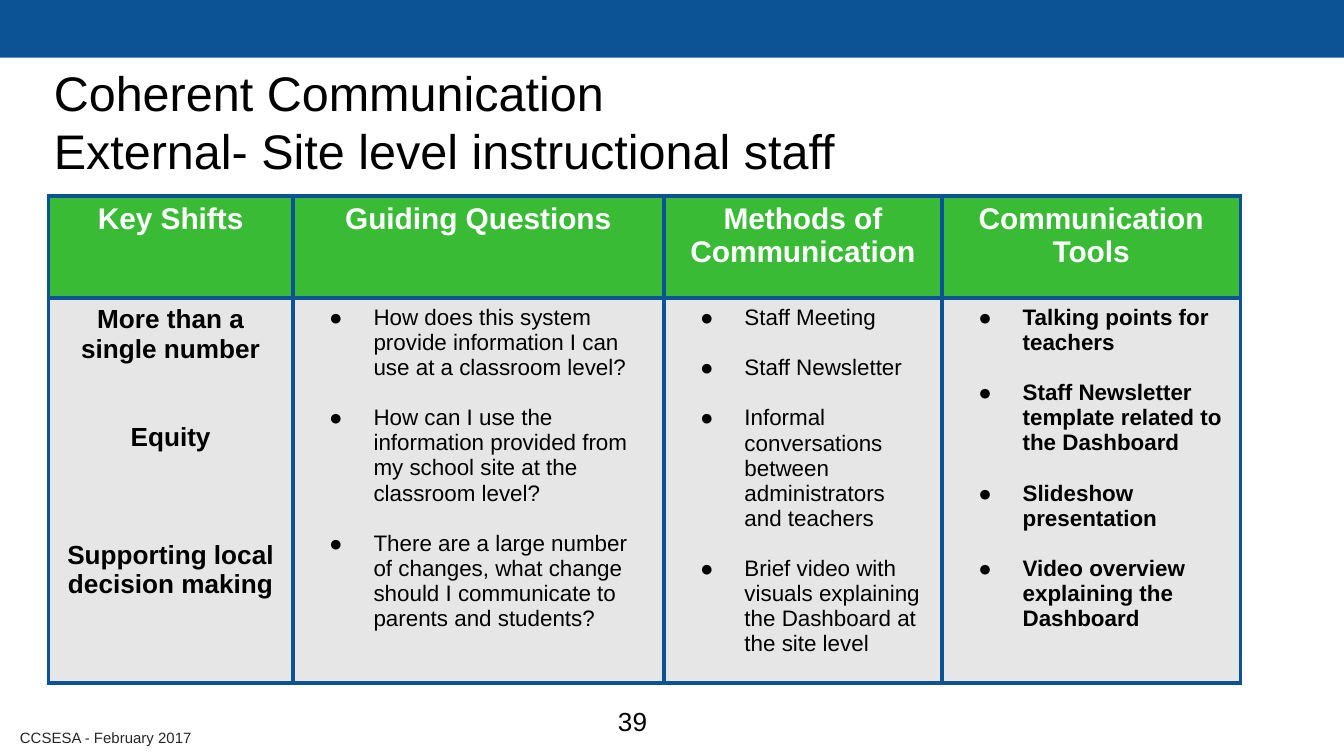
from pptx import Presentation
from pptx.util import Inches, Pt
from pptx.dml.color import RGBColor
from pptx.enum.shapes import MSO_SHAPE as Shape
from pptx.enum.text import MSO_ANCHOR as Anchor, PP_ALIGN as Align
from lxml.etree import SubElement
from pptx.oxml.ns import qn

BLUE, GREEN, GREY = "0B5394", "39BB36", "E6E6E6"
BLACK, WHITE, DARK = "000000", "FFFFFF", "262626"

HEADS = ["Key Shifts", "Guiding Questions", "Methods of Communication", "Communication Tools"]
SHIFTS = ["More than a single number", "Equity", "Supporting local decision making"]
ASKS = [
    "How does this system provide information I can use at a classroom level?",
    "How can I use the information provided from my school site at the classroom level?",
    "There are a large number of changes, what change should I communicate to parents and students?",
]
WAYS = [
    "Staff Meeting",
    "Staff Newsletter",
    "Informal conversations between administrators and teachers",
    "Brief video with visuals explaining the Dashboard at the site level",
]
TOOLS = [
    "Talking points for teachers",
    "Staff Newsletter template related to the Dashboard",
    "Slideshow presentation",
    "Video overview explaining the Dashboard",
]


def paint(part, tone):
    part.rgb = RGBColor.from_string(tone)


def style(para, size, tone, bold=False, align=Align.LEFT):
    para.alignment = align
    for run in para.runs:
        run.font.name = "Arial"
        run.font.size = Pt(size)
        run.font.bold = bold
        paint(run.font.color, tone)


def pad(frame, anchor):
    frame.margin_left = frame.margin_right = Inches(0.1)
    frame.margin_top = frame.margin_bottom = Inches(0.1)
    frame.vertical_anchor = anchor
    frame.word_wrap = True


def place(shape, box):
    shape.left, shape.top, shape.width, shape.height = map(Inches, box)


def add_band(slide, box):
    band = slide.shapes.add_shape(Shape.RECTANGLE, *map(Inches, box))
    band.shadow.inherit = False
    band.fill.solid()
    paint(band.fill.fore_color, BLUE)
    band.line.fill.background()


def add_title(slide, box, text):
    title = slide.shapes.title
    place(title, box)
    pad(title.text_frame, Anchor.TOP)
    title.text_frame.text = text
    style(title.text_frame.paragraphs[0], 26, BLACK)


def add_label(slide, box, text, size, tone):
    frame = slide.shapes.add_textbox(*map(Inches, box)).text_frame
    pad(frame, Anchor.MIDDLE)
    frame.text = text
    style(frame.paragraphs[0], size, tone)


def add_edges(cell):
    props = cell._tc.get_or_add_tcPr()
    for side in ("lnL", "lnR", "lnT", "lnB"):
        line = SubElement(props, qn(f"a:{side}"), w=str(Pt(2.25)))
        fill = SubElement(line, qn("a:solidFill"))
        SubElement(fill, qn("a:srgbClr"), val=BLUE)


def add_bullet(para):
    props = para._p.get_or_add_pPr()
    props.set("marL", str(Inches(0.5)))
    props.set("indent", str(Inches(-0.33)))
    SubElement(props, qn("a:buFont"), typeface="Arial")
    SubElement(props, qn("a:buChar"), char="●")


def fill_cell(cell, lines, back, size, tone, bold, gaps=(), listed=False):
    add_edges(cell)
    cell.fill.solid()
    paint(cell.fill.fore_color, back)
    cell.text_frame.text = "\n".join(lines)
    paras = cell.text_frame.paragraphs
    for para in paras:
        if listed:
            add_bullet(para)
        style(para, size, tone, bold, Align.LEFT if listed else Align.CENTER)
    for para, gap in zip(paras[1:], gaps):
        para.space_before = Pt(gap)


def add_grid(slide, box):
    grid = slide.shapes.add_table(2, len(HEADS), *map(Inches, box)).table
    for col, width in zip(grid.columns, (1.82, 2.76, 2.07, 2.22)):
        col.width = Inches(width)
    head = 0.76
    grid.rows[0].height = Inches(head)
    grid.rows[1].height = Inches(box[3] - head)
    for col, text in enumerate(HEADS):
        fill_cell(grid.cell(0, col), [text], GREEN, 16, WHITE, True)
    fill_cell(grid.cell(1, 0), SHIFTS, GREY, 14, BLACK, True, (31.5, 47.5))
    for col, lines in enumerate((ASKS, WAYS, TOOLS), 1):
        gaps = [13.5] * (len(lines) - 1)
        fill_cell(grid.cell(1, col), lines, GREY, 12, BLACK, lines is TOOLS, gaps, True)


def main():
    deck = Presentation()
    wide = 10
    deck.slide_width, deck.slide_height = Inches(wide), Inches(wide * 9 / 16)
    slide = deck.slides.add_slide(deck.slide_layouts[5])
    add_label(slide, (0.05, 5.4, 1.59, 0.17), "CCSESA - February 2017", 8, DARK)
    add_band(slide, (0, 0, wide, 0.43))
    add_title(slide, (0.3, 0.37, 9.32, 1.14), "Coherent Communication\vExternal- Site level instructional staff")
    add_label(slide, (4.5, 5.15, 0.6, 0.43), "39", 14, BLACK)
    add_grid(slide, (0.36, 1.46, 8.87, 3.41))
    deck.save("out.pptx")


if __name__ == "__main__":
    main()
